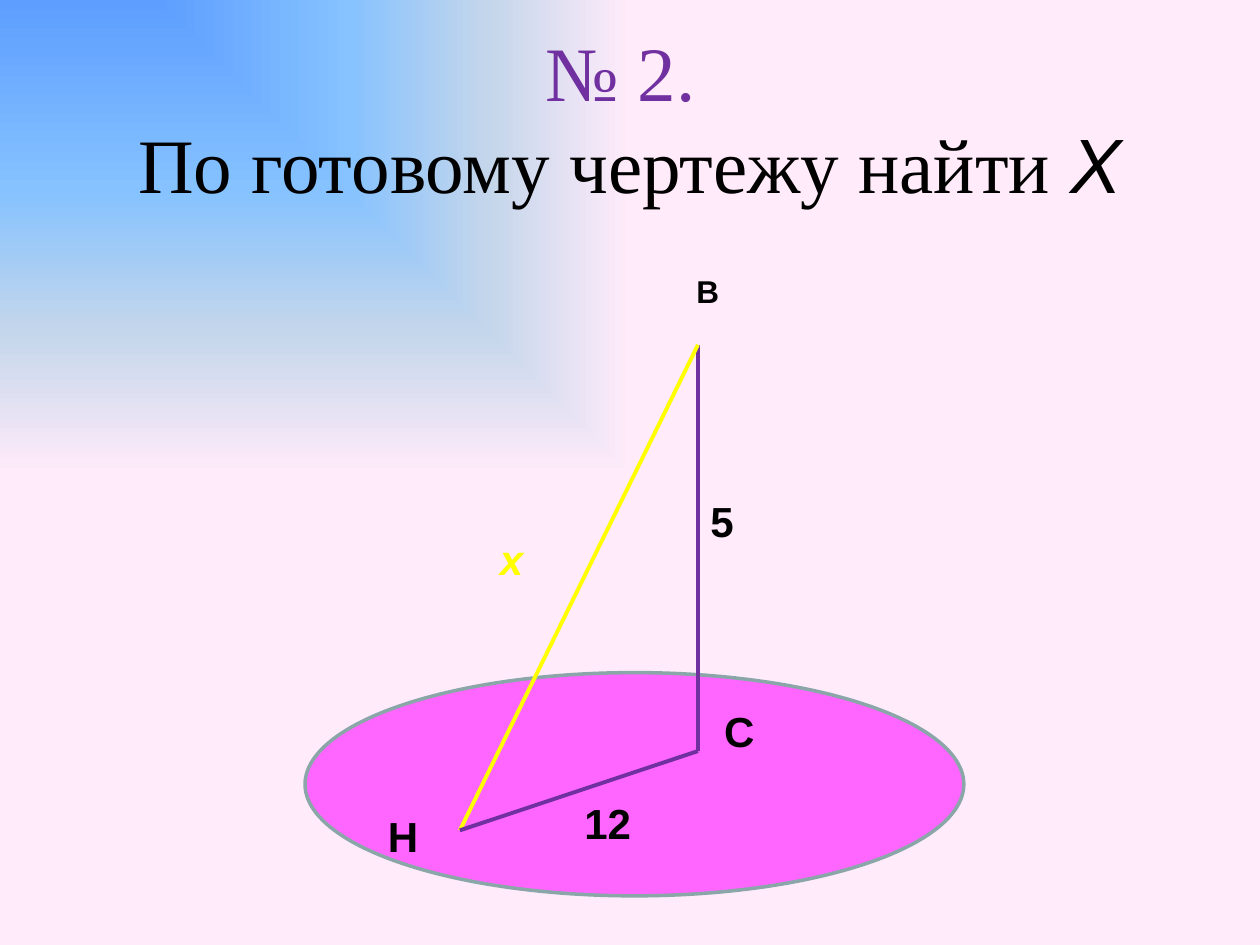
from dataclasses import dataclass

from lxml import etree
from pptx import Presentation
from pptx import util as u
from pptx.dml.color import RGBColor
from pptx.enum import shapes, text
from pptx.oxml import parse_xml
from pptx.oxml.ns import nsdecls, qn

BLACK = RGBColor(0x00, 0x00, 0x00)
PURPLE = RGBColor(0x70, 0x30, 0xA0)
YELLOW = RGBColor(0xFF, 0xFF, 0x00)
PINK = RGBColor(0xFF, 0x66, 0xFF)
GREY = RGBColor(0x8A, 0xA6, 0xA8)
STOPS = [(0, "5E9EFF"), (40, "85C2FF"), (70, "C4D6EB"), (100, "FFEBFA")]

TOP = (14.07, 6.95)
FOOT = (14.07, 15.14)
END = (9.27, 16.74)


@dataclass
class Edge:
    start: tuple[float, float]
    stop: tuple[float, float]
    color: RGBColor


@dataclass
class Label:
    word: str
    left: float
    top: float
    width: float
    height: float = 1.7
    size: int = 24
    color: RGBColor = BLACK
    italic: bool = False


EDGES = [
    Edge(TOP, FOOT, PURPLE),
    Edge(TOP, END, YELLOW),
    Edge(FOOT, END, PURPLE),
]
LABELS = [
    Label("Н", 7.57, 16.21, 1.63),
    Label("С", 14.35, 14.1, 1.63),
    Label("5", 14.07, 9.86, 1.42),
    Label("х", 9.83, 10.64, 1.42, color=YELLOW, italic=True),
    Label("12", 11.53, 15.95, 1.47, height=1.27),
    Label("В", 13.79, 5.36, 1.4, height=1.37, size=18),
]


def add_text(para, word: str, *, size: int, color: RGBColor = BLACK,
             font: str = "Arial", bold: bool = False, italic: bool = False) -> None:
    run = para.add_run()
    run.text = word
    run.font.name = font
    run.font.size = u.Pt(size)
    run.font.color.rgb = color
    run.font.bold = bold
    run.font.italic = italic


def paint_back(slide) -> None:
    stops = "".join(
        f'<a:gs pos="{pos * 1000}"><a:srgbClr val="{color}"/></a:gs>'
        for pos, color in STOPS
    )
    back = parse_xml(
        f'<p:bg {nsdecls("p", "a")}><p:bgPr><a:gradFill rotWithShape="1">'
        f'<a:gsLst>{stops}</a:gsLst><a:path path="rect">'
        '<a:fillToRect r="100000" b="100000"/></a:path></a:gradFill>'
        '<a:effectLst/></p:bgPr></p:bg>'
    )
    slide.element.cSld.insert(0, back)


def draw_plane(group) -> None:
    plane = group.shapes.add_shape(
        shapes.MSO_SHAPE.OVAL, u.Cm(6.15), u.Cm(13.56), u.Cm(13.28), u.Cm(4.5))
    plane.shadow.inherit = False
    plane.fill.solid()
    plane.fill.fore_color.rgb = PINK
    plane.line.color.rgb = GREY
    plane.line.width = u.Pt(2)


def draw_edge(group, edge: Edge) -> None:
    ends = [u.Cm(value) for value in edge.start + edge.stop]
    line = group.shapes.add_connector(shapes.MSO_CONNECTOR.STRAIGHT, *ends)
    line.line.color.rgb = edge.color
    line.line.width = u.Pt(2.25)
    etree.SubElement(line.element.spPr, qn("a:effectLst"))


def draw_label(group, label: Label) -> None:
    box = group.shapes.add_textbox(
        u.Cm(label.left), u.Cm(label.top), u.Cm(label.width), u.Cm(label.height))
    frame = box.text_frame
    frame.word_wrap = False
    frame.auto_size = text.MSO_AUTO_SIZE.SHAPE_TO_FIT_TEXT
    add_text(frame.paragraphs[0], label.word, size=label.size,
             color=label.color, bold=True, italic=label.italic)


def draw_title(slide) -> None:
    box = slide.shapes.add_textbox(u.Cm(1.27), u.Cm(0.76), u.Cm(22.86), u.Cm(3.18))
    frame = box.text_frame
    frame.word_wrap = True
    frame.vertical_anchor = text.MSO_ANCHOR.MIDDLE
    para = frame.paragraphs[0]
    para.alignment = text.PP_ALIGN.CENTER
    add_text(para, "№ 2. ", size=44, color=PURPLE, font="Times New Roman")
    para.add_line_break()
    add_text(para, "По готовому чертежу найти ", size=44, font="Times New Roman")
    add_text(para, "Х", size=44, italic=True)


def main() -> None:
    deck = Presentation()
    deck.slide_width = u.Cm(25.4)
    deck.slide_height = u.Cm(19.05)
    slide = deck.slides.add_slide(deck.slide_layouts[6])
    paint_back(slide)
    group = slide.shapes.add_group_shape()
    draw_plane(group)
    for edge in EDGES:
        draw_edge(group, edge)
    for label in LABELS:
        draw_label(group, label)
    draw_title(slide)
    deck.save("out.pptx")


if __name__ == "__main__":
    main()
